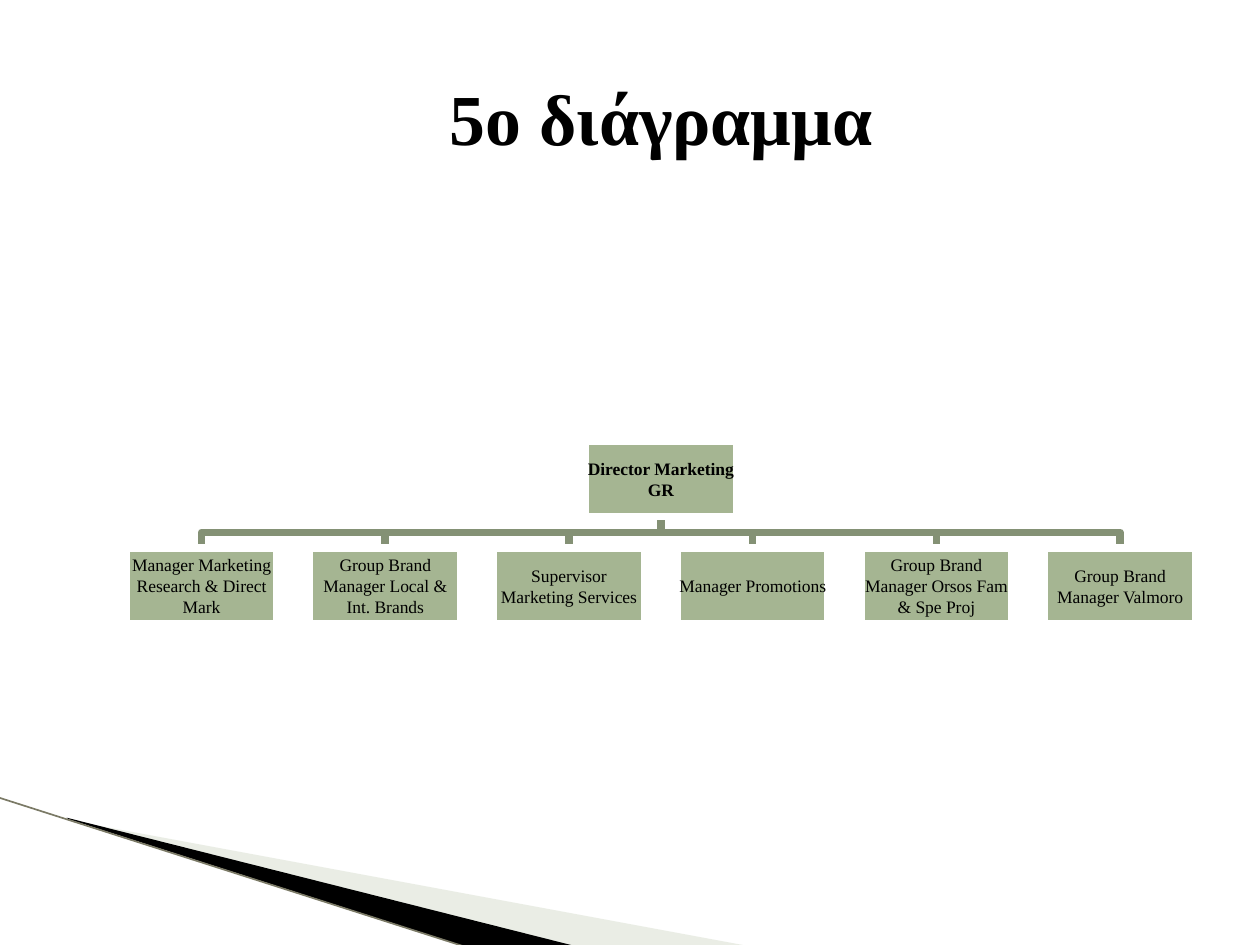
from lxml import etree
from pptx import Presentation
from pptx.dml.color import RGBColor
from pptx.enum import shapes, text
from pptx.oxml.ns import qn
from pptx.util import Inches, Pt

FONT = "Times New Roman"
SAGE, MOSS = "A5B592", "849175"
WIDE, HIGH = 1.2, 0.6      # size of a box
LEFT, STEP = 1, 1.458      # first box and spacing in the lower row
TOP, LOW = 3.5, 4.35       # tops of the two levels

CHIEF = "Director Marketing GR"
TEAM = [
    "Manager Marketing Research & Direct Mark",
    "Group Brand Manager Local & Int. Brands",
    "Supervisor Marketing Services",
    "Manager Promotions",
    "Group Brand Manager Orsos Fam & Spe Proj",
    "Group Brand Manager Valmoro",
]


def paint(fmt, color):
    """Give a fill or a font one solid colour."""
    if hasattr(fmt, "solid"):
        fmt.solid()
        fmt.fore_color.rgb = RGBColor.from_string(color)
    else:
        fmt.color.rgb = RGBColor.from_string(color)


def stroke(shape, color, width):
    paint(shape.line.fill, color)
    shape.line.width = Pt(width)


def write(shape, words, size=10, bold=False, inset=0.01):
    frame = shape.text_frame
    frame.word_wrap = True
    frame.vertical_anchor = text.MSO_ANCHOR.MIDDLE
    frame.margin_left = frame.margin_right = Inches(inset)
    frame.margin_top = frame.margin_bottom = Inches(inset)
    para = frame.paragraphs[0]
    para.alignment = text.PP_ALIGN.CENTER
    run = para.add_run()
    run.text = words
    run.font.name, run.font.size, run.font.bold = FONT, Pt(size), bold
    paint(run.font, "000000")


def trace(slide, points, close=False):
    """Draw an outline through points given in inches."""
    spots = [(Inches(x), Inches(y)) for x, y in points]
    pen = slide.shapes.build_freeform(*spots[0])
    pen.add_line_segments(spots[1:], close=close)
    shape = pen.convert_to_shape()
    shape.shadow.inherit = False
    return shape


def wedge(slide, points, color, alpha=None):
    shape = trace(slide, points, close=True)
    paint(shape.fill, color)
    shape.line.fill.background()
    if alpha is not None:
        tint = shape.fill._xPr.find(qn("a:solidFill"))[0]
        etree.SubElement(tint, qn("a:alpha"), val=str(alpha * 1000))


def edge(slide, start, end, color, width):
    line = slide.shapes.add_connector(
        shapes.MSO_CONNECTOR.STRAIGHT, *map(Inches, start + end))
    stroke(line, color, width)
    etree.SubElement(line._element.spPr, qn("a:effectLst"))


def branch(slide, start, end):
    mid = (start[1] + end[1]) / 2
    shape = trace(slide, [start, (start[0], mid), (end[0], mid), end])
    shape.fill.background()
    stroke(shape, MOSS, 4.33)


def box(slide, left, top, words, bold=False):
    shape = slide.shapes.add_shape(
        shapes.MSO_SHAPE.RECTANGLE, *map(Inches, (left, top, WIDE, HIGH)))
    shape.shadow.inherit = False
    paint(shape.fill, SAGE)
    stroke(shape, "FFFFFF", 4.33)
    write(shape, words, bold=bold)


def main():
    deck = Presentation()
    deck.slide_width, deck.slide_height = Inches(10), Inches(7.5)
    slide = deck.slides.add_slide(deck.slide_layouts[6])

    # Corner decoration
    wedge(slide, [(0.55, 6.51), (5.95, 7.51), (4.56, 7.51), (0.55, 6.5)],
          "CBD4C0", alpha=40)
    wedge(slide, [(0.53, 6.49), (4.57, 7.51), (3.72, 7.52), (0.54, 6.5)],
          "000000")
    edge(slide, (-0.01, 6.33), (3.71, 7.52), "7B7A66", 0.95)

    # Title
    title = slide.shapes.add_textbox(*map(Inches, (1, 0.3, 8.5, 1.25)))
    write(title, "5ο διάγραμμα", size=41, bold=True, inset=0.05)

    # Organisation chart: branches behind, boxes in front
    lefts = [LEFT + i * STEP for i in range(len(TEAM))]
    head = (lefts[0] + lefts[-1]) / 2
    for left in reversed(lefts):
        branch(slide, (head + WIDE / 2, TOP + HIGH), (left + WIDE / 2, LOW))
    box(slide, head, TOP, CHIEF, bold=True)
    for left, role in zip(lefts, TEAM):
        box(slide, left, LOW, role)

    deck.save("out.pptx")


if __name__ == "__main__":
    main()
